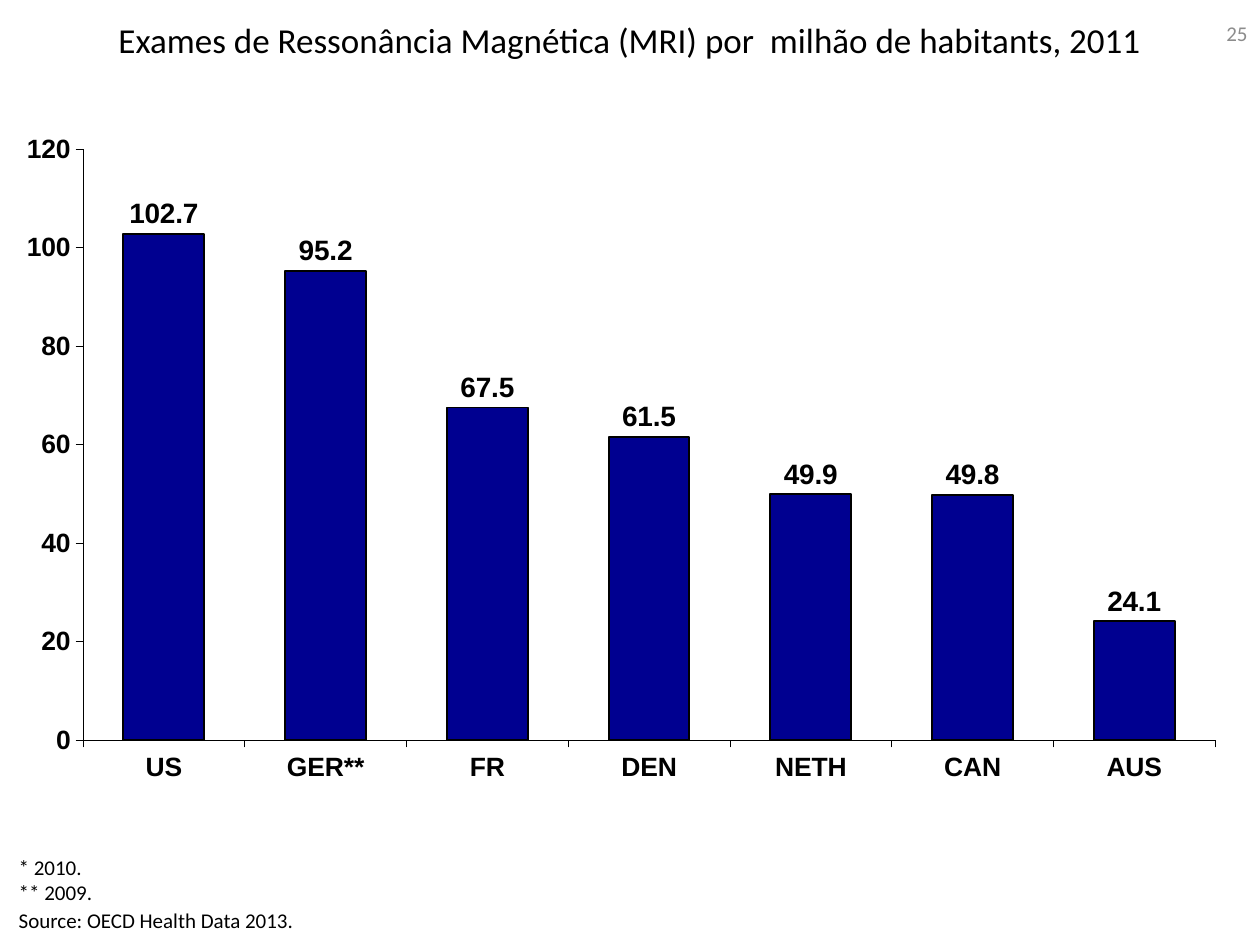
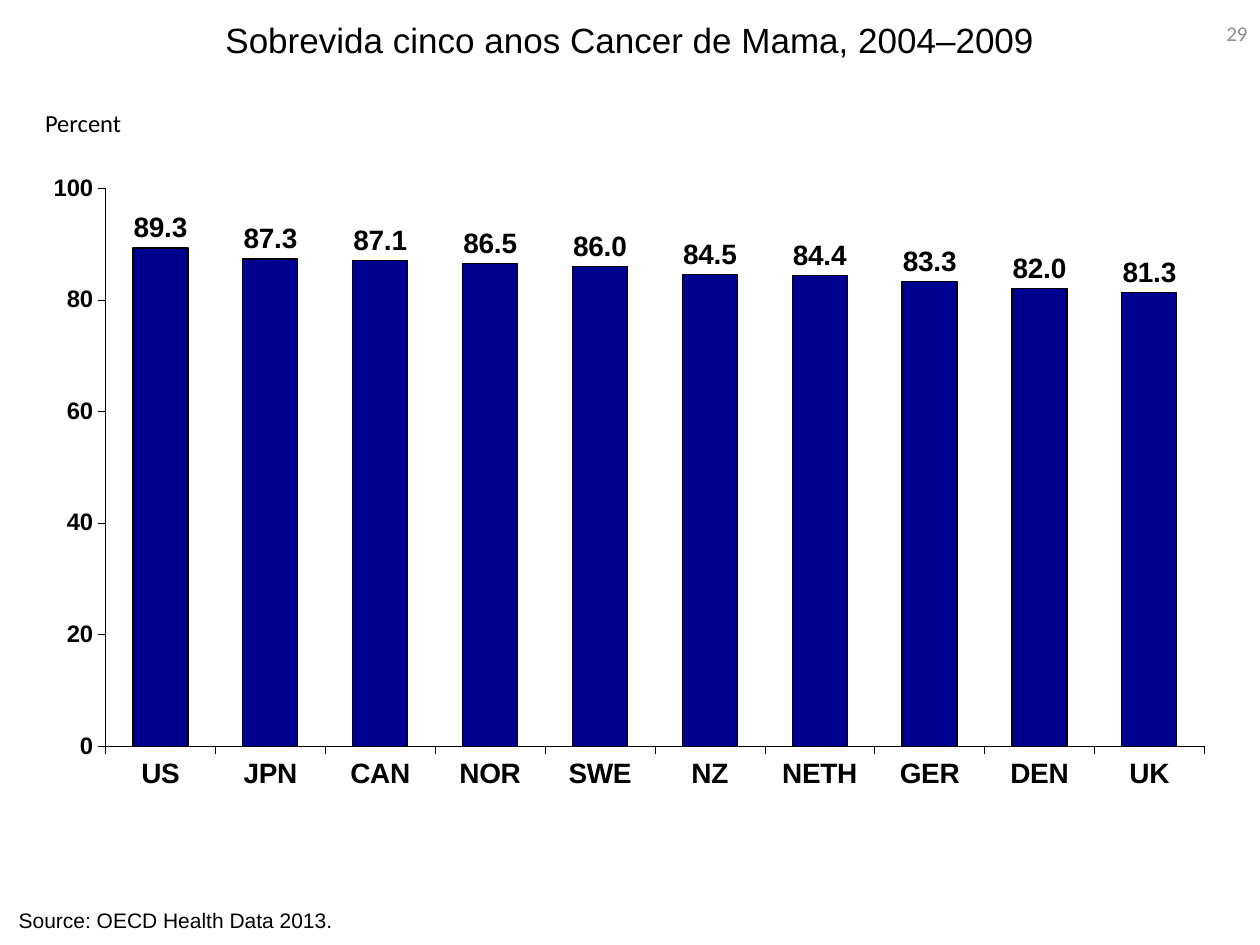
from lxml.etree import SubElement
from pptx import Presentation
from pptx.chart.data import CategoryChartData
from pptx.dml.color import RGBColor
from pptx.enum.chart import XL_CHART_TYPE as ChartType
from pptx.enum.chart import XL_LABEL_POSITION as LabelPosition
from pptx.enum.chart import XL_TICK_MARK as TickMark
from pptx.enum.text import MSO_ANCHOR as Anchor
from pptx.enum.text import PP_ALIGN as Align
from pptx.oxml.ns import qn
from pptx.util import Pt

COLORS = {"ink": "000000", "bar": "000090", "number": "8C8C8C", "paper": "FFFFFF"}
SOURCE = "Source: OECD Health Data 2013."

MRI_EXAMS = {
    "frame": (12.24, 71.28, 689.76, 406.08),
    "plot": (0.051, 0.034, 0.938, 0.832),
    "values": {"US": 102.7, "GER**": 95.2, "FR": 67.5, "DEN": 61.5,
               "NETH": 49.9, "CAN": 49.8, "AUS": 24.1},
    "top": 120,
    "category_size": 15.1,
    "value_size": 15.1,
    "outline": 1.08,
    "axis_format": "#,##0",
    "label_format": "#,##0.0",
}
BREAST_CANCER = {
    "frame": (23.04, 51.84, 665.28, 406.8),
    "plot": (0.056, 0.137, 0.944, 0.784),
    "values": {"US": 89.3, "JPN": 87.3, "CAN": 87.1, "NOR": 86.5, "SWE": 86.0,
               "NZ": 84.5, "NETH": 84.4, "GER": 83.3, "DEN": 82.0, "UK": 81.3},
    "top": 100,
    "category_size": 16,
    "value_size": 13.6,
    "outline": 0.75,
    "axis_format": "0",
    "label_format": "0.0",
}


def color(name):
    return RGBColor.from_string(COLORS[name])


def apply(target, formats):
    for attribute, value in formats.items():
        setattr(target, attribute, value)


def style_font(font, size, face="Arial", ink="ink", bold=False):
    apply(font, {"size": Pt(size), "name": face, "bold": bold})
    font.color.rgb = color(ink)


def style_line(line, width):
    line.color.rgb = color("ink")
    line.width = Pt(width)


def add_text(slide, frame, lines, size=12, face="Calibri", ink="ink",
             align=Align.LEFT, anchor=Anchor.TOP, wrap=True):
    text = slide.shapes.add_textbox(*map(Pt, frame)).text_frame
    apply(text, {"word_wrap": wrap, "vertical_anchor": anchor, "text": "\n".join(lines)})
    for paragraph in text.paragraphs:
        paragraph.alignment = align
        style_font(paragraph.runs[0].font, size, face, ink)


def place_plot(chart, plot):
    area = chart._chartSpace.find(".//" + qn("c:plotArea"))
    for old_layout in area.findall(qn("c:layout")):
        area.remove(old_layout)
    layout = SubElement(area, qn("c:layout"))
    area.insert(0, layout)
    manual = SubElement(layout, qn("c:manualLayout"))
    settings = [("layoutTarget", "inner"), ("xMode", "edge"), ("yMode", "edge")]
    for tag, value in settings + list(zip("xywh", plot)):
        SubElement(manual, qn("c:" + tag)).set("val", str(value))


def style_axis(axis, size):
    apply(axis, {"has_major_gridlines": False, "major_tick_mark": TickMark.OUTSIDE,
                 "minor_tick_mark": TickMark.NONE})
    style_font(axis.tick_labels.font, size, bold=True)
    style_line(axis.format.line, 0.28)


def add_column_chart(slide, content):
    data = CategoryChartData(number_format=content["label_format"])
    data.categories = list(content["values"])
    data.add_series("Series 1", list(content["values"].values()))
    chart = slide.shapes.add_chart(
        ChartType.COLUMN_CLUSTERED, *map(Pt, content["frame"]), data).chart
    apply(chart, {"has_title": False, "has_legend": False})
    style_font(chart.font, 14, "Times New Roman")
    place_plot(chart, content["plot"])

    style_axis(chart.category_axis, content["category_size"])
    style_axis(chart.value_axis, content["value_size"])
    apply(chart.value_axis, {"minimum_scale": 0, "maximum_scale": content["top"],
                             "major_unit": 20})
    apply(chart.value_axis.tick_labels, {"number_format": content["axis_format"],
                                         "number_format_is_linked": False})

    columns = chart.plots[0]
    apply(columns, {"gap_width": 100, "vary_by_categories": False})
    bars = columns.series[0]
    bars.format.fill.solid()
    bars.format.fill.fore_color.rgb = color("bar")
    style_line(bars.format.line, content["outline"])
    apply(bars.data_labels, {"show_value": True, "position": LabelPosition.OUTSIDE_END,
                             "number_format": content["label_format"],
                             "number_format_is_linked": False})
    style_font(bars.data_labels.font, 16, bold=True)


def add_chart_slide(deck, number, title, content, title_face, source_face):
    slide = deck.slides.add_slide(deck.slide_layouts[6])
    slide.background.fill.solid()
    slide.background.fill.fore_color.rgb = color("paper")
    add_text(slide, (552.24, 0, 167.76, 37.44), [number], ink="number",
             align=Align.RIGHT, anchor=Anchor.MIDDLE)
    add_text(slide, (0, 7.2, 720, 36), [title], 20, title_face, align=Align.CENTER)
    add_column_chart(slide, content)
    add_text(slide, (3.6, 514.8, 320, 21.6), [SOURCE], face=source_face)
    return slide


def main():
    deck = Presentation()
    apply(deck, {"slide_width": Pt(720), "slide_height": Pt(540)})

    mri = add_chart_slide(
        deck, "25", "Exames de Ressonância Magnética (MRI) por  milhão de habitants, 2011",
        MRI_EXAMS, "Calibri", "Calibri")
    add_text(mri, (3.6, 484.56, 57.6, 36), ["* 2010.", "** 2009."], wrap=False)

    survival = add_chart_slide(
        deck, "29", "Sobrevida cinco anos Cancer de Mama, 2004–2009",
        BREAST_CANCER, "Arial", "Arial")
    add_text(survival, (18.72, 58.32, 95.76, 24.48), ["Percent"], 14)

    deck.save("out.pptx")


if __name__ == "__main__":
    main()
